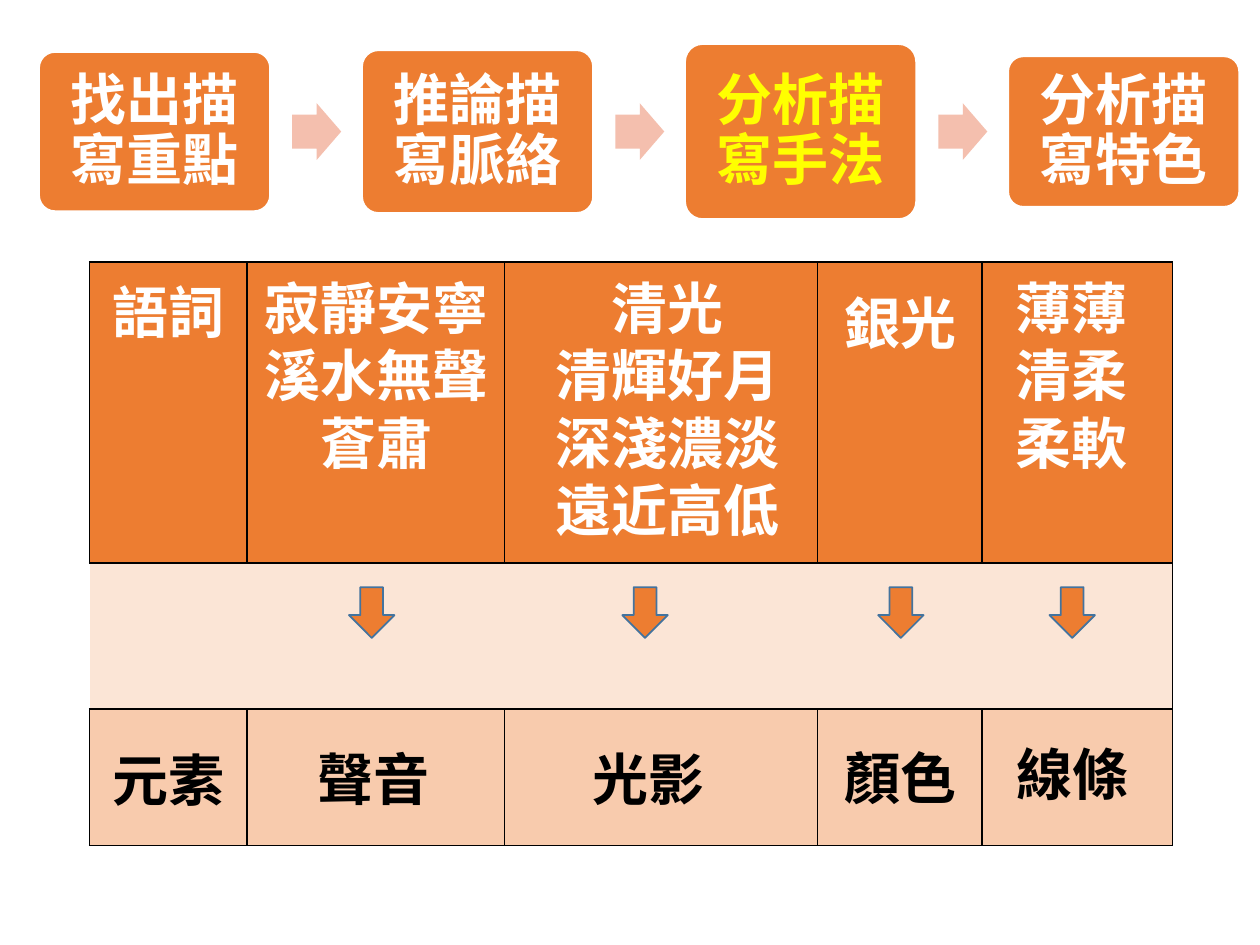
from lxml import etree
from pptx import Presentation, util as u
from pptx.dml.color import RGBColor
from pptx.enum import shapes, text
from pptx.oxml import ns

FONT = "Noto Sans CJK SC"
ORANGE, WHITE, BLACK = "ED7D31", "FFFFFF", "000000"
CENTER, LEFT = text.PP_ALIGN.CENTER, text.PP_ALIGN.LEFT
STEPS = [("找出描寫重點", 91, WHITE), ("推論描寫脈絡", 93, WHITE),
         ("分析描寫手法", 100, "FFFF00"), ("分析描寫特色", 86, WHITE)]
STEP_LEFT, STEP_WIDTH, STEP_PITCH, STEP_MIDDLE = 22.3, 132, 184.6, 75.2
COLUMN_WIDTHS = [90, 147, 179, 94, 109]
ROW_HEIGHTS = [172, 83.5, 78]
ROW_FILLS = [ORANGE, "FBE5D6", "F8CBAD"]
WORDS = [("寂靜安寧\n溪水無聲\n蒼肅", 143.3, 152.6, 144),
         ("清光\n清輝好月\n深淺濃淡\n遠近高低", 309.6, 152.6, 144),
         ("銀光", 470.2, 161.3, 88.6),
         ("薄薄\n清柔\n柔軟", 566.6, 152.6, 91.4)]
ELEMENTS = [("聲音", 174.2, 421.9, LEFT), ("光影", 319.7, 421.9, CENTER),
            ("顏色", 463.7, 421.2, CENTER), ("線條", 561.6, 419, CENTER)]
ARROW_CENTERS = [212.4, 368.6, 514.8, 612.7]


def rgb(color):
    """Turn a hex string into a colour."""
    return RGBColor.from_string(color)


def style_text(frame, words, color, align=CENTER, spacing=None):
    """Write bold 32-point text, one paragraph per line."""
    frame.text = words
    for paragraph in frame.paragraphs:
        paragraph.alignment = align
        if spacing:
            paragraph.line_spacing = u.Pt(spacing)
        for run in paragraph.runs:
            run.font.size, run.font.bold = u.Pt(32), True
            run.font.color.rgb = rgb(color)
            run.font.name = FONT
            etree.SubElement(run._r.get_or_add_rPr(), ns.qn("a:ea"), typeface=FONT)


def add_block(slide, kind, left, top, width, height, fill, line=None):
    """Add a filled preset shape with an optional one-point outline."""
    block = slide.shapes.add_shape(kind, u.Pt(left), u.Pt(top), u.Pt(width), u.Pt(height))
    block.shadow.inherit = False
    block.fill.solid()
    block.fill.fore_color.rgb = rgb(fill)
    if line:
        block.line.color.rgb = rgb(line)
        block.line.width = u.Pt(1)
    else:
        block.line.fill.background()
    return block


def add_step(slide, index, words, height, color):
    """Add one step of the process at the top."""
    step = add_block(slide, shapes.MSO_SHAPE.ROUNDED_RECTANGLE,
                     STEP_LEFT + index * STEP_PITCH, STEP_MIDDLE - height / 2,
                     STEP_WIDTH, height, ORANGE, WHITE)
    step.adjustments[0] = 0.1
    frame = step.text_frame
    frame.margin_left = frame.margin_right = u.Pt(9.4)
    frame.margin_top = frame.margin_bottom = u.Pt(9.4)
    frame.vertical_anchor = text.MSO_ANCHOR.MIDDLE
    frame.word_wrap = True
    style_text(frame, words, color, spacing=34.3)


def add_step_arrow(slide, index):
    """Add the arrow that leads on from a step."""
    arrow = add_block(slide, shapes.MSO_SHAPE.RIGHT_ARROW, 167 + index * STEP_PITCH,
                      STEP_MIDDLE - 16.2, 28, 32.4, "F4BFAE")
    arrow.adjustments[0] = 0.6


def add_label(slide, words, left, top, width, color, align=CENTER):
    """Add a text box as tall as its lines."""
    height = 38.8 * len(words.split("\n")) + 7.2
    label = slide.shapes.add_textbox(u.Pt(left), u.Pt(top), u.Pt(width), u.Pt(height))
    label.text_frame.word_wrap = True
    label.text_frame.auto_size = text.MSO_AUTO_SIZE.SHAPE_TO_FIT_TEXT
    style_text(label.text_frame, words, color, align, 38.5)


def set_borders(cell, visible):
    """Draw black borders on the visible sides and none on the others."""
    properties = cell._tc.get_or_add_tcPr()
    for index, side in enumerate("LRTB"):
        border = etree.Element(ns.qn(f"a:ln{side}"), w="12700")
        if side in visible:
            fill = etree.SubElement(border, ns.qn("a:solidFill"))
            etree.SubElement(fill, ns.qn("a:srgbClr"), val=BLACK)
        else:
            etree.SubElement(border, ns.qn("a:noFill"))
        properties.insert(index, border)


def add_word_table(slide):
    """Add the table of words and the elements they express."""
    table = slide.shapes.add_table(
        len(ROW_HEIGHTS), len(COLUMN_WIDTHS), u.Pt(51.2), u.Pt(149.8),
        u.Pt(sum(COLUMN_WIDTHS)), u.Pt(sum(ROW_HEIGHTS))).table
    last = len(COLUMN_WIDTHS) - 1
    for column, width in enumerate(COLUMN_WIDTHS):
        table.columns[column].width = u.Pt(width)
    for row, height in enumerate(ROW_HEIGHTS):
        table.rows[row].height = u.Pt(height)
        for column in range(last + 1):
            cell = table.cell(row, column)
            cell.fill.solid()
            cell.fill.fore_color.rgb = rgb(ROW_FILLS[row])
            if row != 1:
                set_borders(cell, "LRTB")
            else:
                set_borders(cell, "RTB" if column == last else "TB")
    style_text(table.cell(0, 0).text_frame, "語詞", WHITE)
    style_text(table.cell(2, 0).text_frame, "元素", BLACK)
    table.cell(2, 0).vertical_anchor = text.MSO_ANCHOR.MIDDLE


def main():
    """Build the slide and save it."""
    deck = Presentation()
    deck.slide_width, deck.slide_height = u.Pt(720), u.Pt(540)
    slide = deck.slides.add_slide(deck.slide_layouts[6])
    for index, step in enumerate(STEPS):
        add_step(slide, index, *step)
        if index < len(STEPS) - 1:
            add_step_arrow(slide, index)
    add_word_table(slide)
    for center in ARROW_CENTERS:
        add_block(slide, shapes.MSO_SHAPE.DOWN_ARROW, center - 13, 335.5, 26, 29,
                  ORANGE, "43739E")
    for words, left, top, width in WORDS:
        add_label(slide, words, left, top, width, WHITE)
    for words, left, top, align in ELEMENTS:
        add_label(slide, words, left, top, 102.2, BLACK, align)
    deck.save("out.pptx")


if __name__ == "__main__":
    main()
